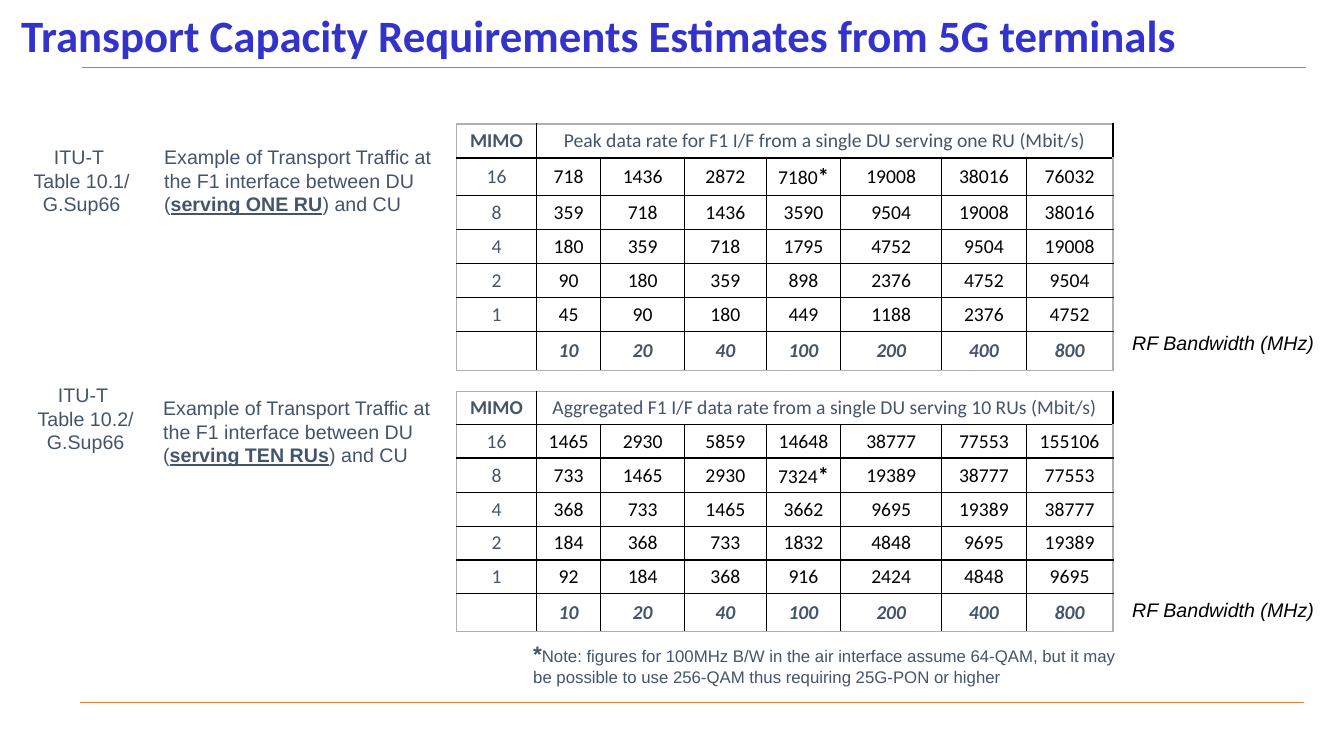
from pptx import Presentation
from pptx.dml.color import RGBColor
from pptx.enum import shapes, text
from pptx.oxml import parse_xml
from pptx.oxml.ns import nsdecls
from pptx.util import Inches, Pt

COLORS = {
    "title": "3333CC",
    "label": "44546A",
    "figure": "000000",
    "grid": "000000",
    "frame": "B0B0B0",
    "top_rule": "8C8C8C",
    "bottom_rule": "ED7D31",
}
BANDWIDTHS = [10, 20, 40, 100, 200, 400, 800]
MIMO_LAYERS = [16, 8, 4, 2, 1]
COLUMN_WIDTHS = [0.79, 0.64, 0.83, 0.81, 0.74, 1, 0.84, 0.86]
SECTIONS = [
    {
        "top": 1.23,
        "height": 2.4,
        "heading": "Peak data rate for F1 I/F from a single DU serving one RU (Mbit/s)",
        "rates": [
            ["718", "1436", "2872", "7180*", "19008", "38016", "76032"],
            ["359", "718", "1436", "3590", "9504", "19008", "38016"],
            ["180", "359", "718", "1795", "4752", "9504", "19008"],
            ["90", "180", "359", "898", "2376", "4752", "9504"],
            ["45", "90", "180", "449", "1188", "2376", "4752"],
        ],
        "starred_height": 0.37,
        "reference": "Table 10.1/",
        "reference_at": (0.23, 1.39),
        "served": "serving ONE RU",
        "example_at": (1.53, 1.39),
        "axis_top": 3.23,
    },
    {
        "top": 3.88,
        "height": 2.33,
        "heading": "Aggregated F1 I/F data rate from a single DU serving 10 RUs (Mbit/s)",
        "rates": [
            ["1465", "2930", "5859", "14648", "38777", "77553", "155106"],
            ["733", "1465", "2930", "7324*", "19389", "38777", "77553"],
            ["368", "733", "1465", "3662", "9695", "19389", "38777"],
            ["184", "368", "733", "1832", "4848", "9695", "19389"],
            ["92", "184", "368", "916", "2424", "4848", "9695"],
        ],
        "starred_height": 0.33,
        "reference": "Table 10.2/",
        "reference_at": (0.27, 3.75),
        "served": "serving TEN RUs",
        "example_at": (1.52, 3.88),
        "axis_top": 5.88,
    },
]


def add_run(paragraph, wording, size=14, color="label", face="Arial",
            bold=False, italic=False, underline=False):
    run = paragraph.add_run()
    run.text = wording
    run.font.name = face
    run.font.size = Pt(size)
    run.font.bold = bold
    run.font.italic = italic
    run.font.underline = underline
    run.font.color.rgb = RGBColor.from_string(COLORS[color])


def add_frame(slide, left, top, width, height, wrap=True):
    frame = slide.shapes.add_textbox(
        Inches(left), Inches(top), Inches(width), Inches(height)).text_frame
    frame.word_wrap = wrap
    frame.auto_size = text.MSO_AUTO_SIZE.SHAPE_TO_FIT_TEXT
    return frame


def add_rule(slide, left, top, width, color):
    rule = slide.shapes.add_connector(
        shapes.MSO_CONNECTOR.STRAIGHT,
        Inches(left), Inches(top), Inches(left + width), Inches(top))
    rule.line.color.rgb = RGBColor.from_string(COLORS[color])
    rule.line.width = Pt(0.5)
    rule._element.spPr.append(parse_xml(f"<a:effectLst {nsdecls('a')}/>"))


def add_title(slide, left, top, width, height):
    title = slide.shapes.title
    title.left, title.top = Inches(left), Inches(top)
    title.width, title.height = Inches(width), Inches(height)
    title.text_frame.vertical_anchor = text.MSO_ANCHOR.MIDDLE
    title.text_frame.auto_size = text.MSO_AUTO_SIZE.NONE
    headline = title.text_frame.paragraphs[0]
    headline.alignment = text.PP_ALIGN.LEFT
    headline.line_spacing = 0.9
    add_run(headline, "Transport Capacity Requirements Estimates from 5G terminals",
            32, "title", "Calibri", bold=True)


def style_cell(cell, outer_sides):
    cell.vertical_anchor = text.MSO_ANCHOR.MIDDLE
    cell.margin_left = cell.margin_right = Inches(0.01)
    cell.margin_top = cell.margin_bottom = Inches(0.04)
    properties = cell._tc.get_or_add_tcPr()
    for side in "LRTB":
        color = COLORS["frame" if side in outer_sides else "grid"]
        properties.append(parse_xml(
            f'<a:ln{side} {nsdecls("a")} w="12700"><a:solidFill>'
            f'<a:srgbClr val="{color}"/></a:solidFill></a:ln{side}>'))
    cell.fill.background()


def fill_cell(cell, wording, **style):
    paragraph = cell.text_frame.paragraphs[0]
    paragraph.alignment = text.PP_ALIGN.CENTER
    number = wording.rstrip("*")
    add_run(paragraph, number, face="Calibri", **style)
    if number != wording:
        add_run(paragraph, "*", 16, "figure", "Calibri", bold=True)


def add_rate_table(slide, section, left, top, height):
    row_count, column_count = len(MIMO_LAYERS) + 2, len(COLUMN_WIDTHS)
    rate_table = slide.shapes.add_table(
        row_count, column_count, Inches(left), Inches(top),
        Inches(sum(COLUMN_WIDTHS)), Inches(height)).table
    rate_table.first_row = rate_table.horz_banding = False
    for column, width in zip(rate_table.columns, COLUMN_WIDTHS):
        column.width = Inches(width)
    starred_height = section["starred_height"]
    for row in rate_table.rows:
        row.height = Inches((height - starred_height) / (row_count - 1))
    rate_table.rows[1].height = Inches(starred_height)

    for r in range(row_count):
        for c in range(column_count):
            edges = {"L": c == 0, "R": c == column_count - 1,
                     "T": r == 0, "B": r == row_count - 1}
            style_cell(rate_table.cell(r, c), [s for s in edges if edges[s]])
    rate_table.cell(0, 1).merge(rate_table.cell(0, column_count - 1))

    fill_cell(rate_table.cell(0, 0), "MIMO", bold=True)
    fill_cell(rate_table.cell(0, 1), section["heading"])
    for r, (layers, rates) in enumerate(zip(MIMO_LAYERS, section["rates"]), 1):
        fill_cell(rate_table.cell(r, 0), str(layers))
        for c, rate in enumerate(rates, 1):
            fill_cell(rate_table.cell(r, c), rate, color="figure")
    for c, bandwidth in enumerate(BANDWIDTHS, 1):
        fill_cell(rate_table.cell(row_count - 1, c), str(bandwidth),
                  bold=True, italic=True)


def add_reference(slide, table_name, left, top):
    frame = add_frame(slide, left, top, 1.16, 0.81, wrap=False)
    body, citation = frame.paragraphs[0], frame.add_paragraph()
    body.alignment = citation.alignment = text.PP_ALIGN.CENTER
    add_run(body, "ITU-T ")
    add_run(citation, table_name)
    citation.add_line_break()
    add_run(citation, "G.Sup66")


def add_example(slide, served, left, top):
    example = add_frame(slide, left, top, 2.86, 0.81).paragraphs[0]
    add_run(example, "Example of Transport Traffic at the F1 interface between DU (")
    add_run(example, served, bold=True, underline=True)
    add_run(example, ") and CU")


def add_axis_label(slide, left, top):
    axis = add_frame(slide, left, top, 2.02, 0.34, wrap=False).paragraphs[0]
    add_run(axis, "RF Bandwidth (MHz)", color="figure", italic=True)


def add_note(slide, left, top, width, height):
    note = add_frame(slide, left, top, width, height).paragraphs[0]
    add_run(note, "*", 16, bold=True)
    add_run(note, "Note: figures for 100MHz B/W in the air interface assume 64-QAM, "
                  "but it may be possible to use 256-QAM thus requiring "
                  "25G-PON or higher", 12)


def main():
    deck = Presentation()
    deck.slide_width, deck.slide_height = Inches(13.33), Inches(7.5)
    slide = deck.slides.add_slide(deck.slide_layouts[5])
    add_rule(slide, 0.81, 0.67, 12.14, "top_rule")
    add_rule(slide, 0.79, 6.97, 12.14, "bottom_rule")
    add_title(slide, 0.11, 0.01, 13.11, 0.73)
    for section in SECTIONS:
        add_rate_table(slide, section, 4.53, section["top"], section["height"])
        add_axis_label(slide, 11.13, section["axis_top"])
        add_reference(slide, section["reference"], *section["reference_at"])
        add_example(slide, section["served"], *section["example_at"])
    add_note(slide, 5.19, 6.3, 6.17, 0.57)
    deck.save("out.pptx")


if __name__ == "__main__":
    main()
